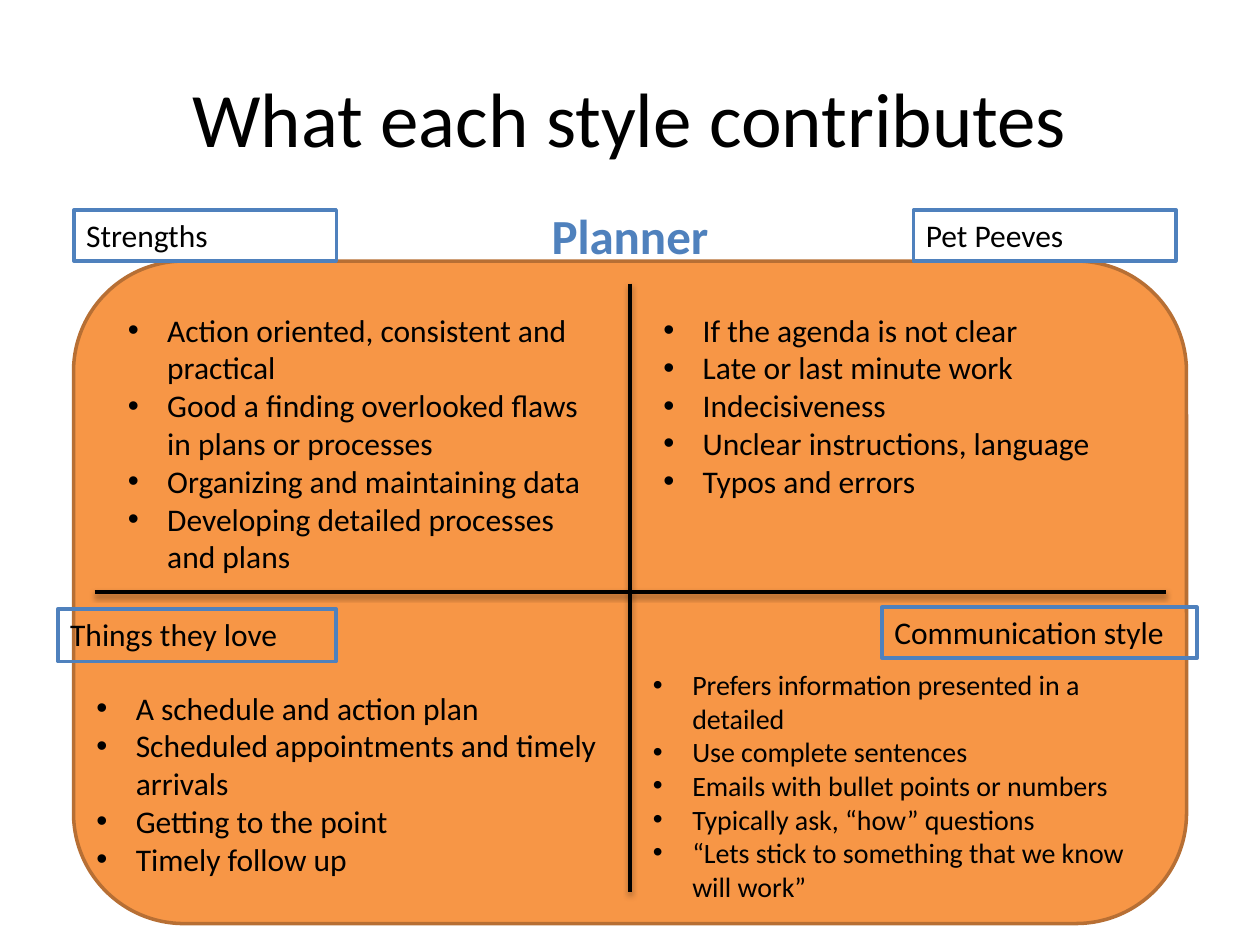
"""Build the slide that shows what the Planner style contributes."""
from dataclasses import dataclass

from lxml.etree import SubElement
from pptx import Presentation
from pptx.dml.color import RGBColor
from pptx.enum.shapes import MSO_CONNECTOR as Connector, MSO_SHAPE as Preset
from pptx.enum.text import MSO_ANCHOR as Anchor, PP_ALIGN as Align
from pptx.oxml.ns import qn
from pptx.util import Pt


@dataclass(frozen=True)
class Theme:
    font: str = "Calibri"
    text: str = "000000"
    accent: str = "4F81BD"
    paper: str = "FFFFFF"
    panel: str = "F79646"
    panel_edge: str = "B76F34"
    title_size: int = 44
    heading_size: int = 28
    body_size: int = 18
    small_size: int = 16
    line_width: int = 2
    bullet_indent: float = 22.5


class SlideBuilder:
    def __init__(self, slide, theme):
        self.slide = slide
        self.theme = theme

    def add_text(self, paragraph, text, size, color=None, bold=False):
        run = paragraph.add_run()
        run.text = text
        run.font.name = self.theme.font
        run.font.size = Pt(size)
        run.font.bold = bold
        run.font.color.rgb = RGBColor.from_string(color or self.theme.text)

    def text_box(self, box, anchor=Anchor.TOP):
        frame = self.slide.shapes.add_textbox(*map(Pt, box)).text_frame
        frame.word_wrap = True
        frame.vertical_anchor = anchor
        return frame

    def heading(self, box, text, size, color=None, bold=False, anchor=Anchor.TOP):
        paragraph = self.text_box(box, anchor).paragraphs[0]
        paragraph.alignment = Align.CENTER
        self.add_text(paragraph, text, size, color, bold)

    def block(self, preset, box, fill, edge):
        shape = self.slide.shapes.add_shape(preset, *map(Pt, box))
        shape.shadow.inherit = False
        if fill:
            shape.fill.solid()
            shape.fill.fore_color.rgb = RGBColor.from_string(fill)
        else:
            shape.fill.background()
        shape.line.color.rgb = RGBColor.from_string(edge)
        shape.line.width = Pt(self.theme.line_width)
        return shape

    def label(self, box, text, fill=None):
        frame = self.block(Preset.RECTANGLE, box, fill, self.theme.accent).text_frame
        frame.word_wrap = True
        frame.vertical_anchor = Anchor.TOP
        paragraph = frame.paragraphs[0]
        paragraph.alignment = Align.LEFT
        self.add_text(paragraph, text, self.theme.body_size)

    def divider(self, start_x, start_y, end_x, end_y):
        ends = map(Pt, (start_x, start_y, end_x, end_y))
        line = self.slide.shapes.add_connector(Connector.STRAIGHT, *ends)
        line.line.color.rgb = RGBColor.from_string(self.theme.text)
        line.line.width = Pt(self.theme.line_width)
        effects = SubElement(line._element.spPr, qn("a:effectLst"))
        shadow = SubElement(effects, qn("a:outerShdw"), blurRad=str(Pt(3.1)),
                            dist=str(Pt(1.6)), dir="5400000", rotWithShape="0")
        color = SubElement(shadow, qn("a:srgbClr"), val=self.theme.text)
        SubElement(color, qn("a:alpha"), val="38000")

    def bullets(self, box, items, size):
        frame = self.text_box(box)
        for index, item in enumerate(items):
            paragraph = frame.add_paragraph() if index else frame.paragraphs[0]
            properties = paragraph._p.get_or_add_pPr()
            indent = Pt(self.theme.bullet_indent)
            properties.set("marL", str(indent))
            properties.set("indent", str(-indent))
            SubElement(properties, qn("a:buFont"), typeface="Arial")
            SubElement(properties, qn("a:buChar"), char="•")
            self.add_text(paragraph, item, size)


def main():
    theme = Theme()
    presentation = Presentation()
    presentation.slide_width, presentation.slide_height = Pt(720), Pt(540)
    slide = presentation.slides.add_slide(presentation.slide_layouts[6])
    builder = SlideBuilder(slide, theme)

    builder.heading((36, 21.6, 648, 90), "What each style contributes",
                    theme.title_size, anchor=Anchor.MIDDLE)
    builder.block(Preset.ROUNDED_RECTANGLE, (42, 149.2, 636, 378.6),
                  theme.panel, theme.panel_edge)
    builder.divider(360, 162, 360, 510)
    builder.label((42.2, 120, 150, 29.1), "Strengths", theme.paper)
    builder.label((522, 120, 150, 29.1), "Pet Peeves", theme.paper)
    builder.divider(54, 338.4, 666, 338.4)
    builder.label((33, 348, 159, 30), "Things they love")
    builder.label((504, 347, 180, 29.1), "Communication style")

    quadrants = [
        ((66, 174, 282, 160), theme.body_size, [
            "Action oriented, consistent and practical",
            "Good a finding overlooked flaws in plans or processes",
            "Organizing and maintaining data",
            "Developing detailed processes and plans"]),
        ((372, 174, 282, 116.6), theme.body_size, [
            "If the agenda is not clear",
            "Late or last minute work",
            "Indecisiveness",
            "Unclear instructions, language",
            "Typos and errors"]),
        ((48, 390, 300, 138), theme.body_size, [
            "A schedule and action plan",
            "Scheduled appointments and timely arrivals",
            "Getting to the point",
            "Timely follow up"]),
        ((366, 378, 294, 143), theme.small_size, [
            "Prefers information presented in a detailed",
            "Use complete sentences",
            "Emails with bullet points or numbers",
            "Typically ask, “how” questions",
            "“Lets stick to something that we know will work”"]),
    ]
    for box, size, items in quadrants:
        builder.bullets(box, items, size)
    builder.heading((198, 114, 324, 41.2), "Planner", theme.heading_size,
                    theme.accent, bold=True)
    presentation.save("out.pptx")


if __name__ == "__main__":
    main()
